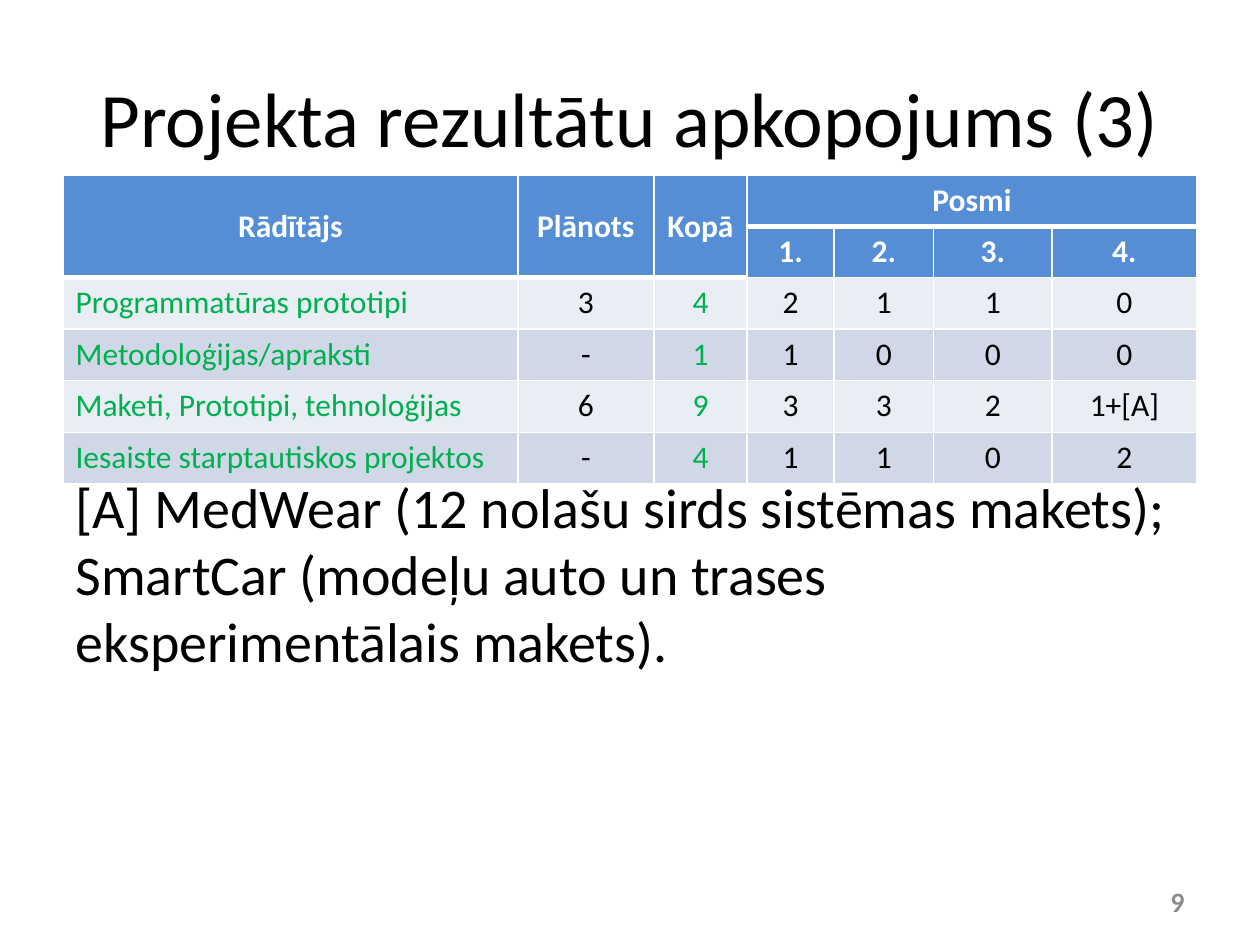
from dataclasses import dataclass

from lxml import etree
from pptx import Presentation
from pptx.dml.color import RGBColor
from pptx.enum import text
from pptx.oxml import ns
from pptx.util import Inches, Pt


@dataclass(frozen=True)
class Theme:
    font: str = "Calibri"
    ink: str = "000000"
    white: str = "FFFFFF"
    header: str = "558ED5"
    accent: str = "00B050"
    muted: str = "8C8C8C"
    bands: tuple = ("E9EDF4", "D0D8E8")
    title_size: int = 44
    note_size: int = 32
    table_size: int = 18
    number_size: int = 16


theme = Theme()


def write(frame, words, size, color, align, bold=False):
    frame.text = words
    paragraph = frame.paragraphs[0]
    paragraph.alignment = align
    font = paragraph.runs[0].font if paragraph.runs else paragraph.font
    font.name, font.size, font.bold = theme.font, Pt(size), bold
    font.color.rgb = RGBColor.from_string(color)


def add_borders(cell, bottom_width):
    properties = cell._tc.get_or_add_tcPr()
    for side, width in (("L", 1), ("R", 1), ("T", 1), ("B", bottom_width)):
        line = etree.SubElement(properties, ns.qn(f"a:ln{side}"), w=str(Pt(width)))
        fill = etree.SubElement(line, ns.qn("a:solidFill"))
        etree.SubElement(fill, ns.qn("a:srgbClr"), val=theme.white)


LEFT, CENTER, RIGHT = text.PP_ALIGN.LEFT, text.PP_ALIGN.CENTER, text.PP_ALIGN.RIGHT

presentation = Presentation()
presentation.slide_width, presentation.slide_height = Inches(10), Inches(7.5)
slide = presentation.slides.add_slide(presentation.slide_layouts[5])

title = slide.shapes.title
title.left, title.top, title.width, title.height = Inches(0.5), Inches(0.3), Inches(9), Inches(1.25)
title.text_frame.vertical_anchor = text.MSO_ANCHOR.MIDDLE
write(title.text_frame, "Projekta rezultātu apkopojums (3)", theme.title_size, theme.ink, CENTER)

results = [
    ["Rādītājs", "Plānots", "Kopā", "Posmi", "", "", ""],
    ["", "", "", "1.", "2.", "3.", "4."],
    ["Programmatūras prototipi", "3", "4", "2", "1", "1", "0"],
    ["Metodoloģijas/apraksti", "-", "1", "1", "0", "0", "0"],
    ["Maketi, Prototipi, tehnoloģijas", "6", "9", "3", "3", "2", "1+[A]"],
    ["Iesaiste starptautiskos projektos", "-", "4", "1", "1", "0", "2"],
]
column_widths = [3.61, 1.08, 0.74, 0.69, 0.79, 0.94, 1.15]
row_heights = [0.39] * 2 + [0.41] * 4
HEADER_ROWS = 2
ACCENT_COLUMNS = (0, 2)

table = slide.shapes.add_table(
    len(row_heights), len(column_widths), Inches(0.5), Inches(1.39), Inches(9), Inches(2.42)
).table
for column, width in zip(table.columns, column_widths):
    column.width = Inches(width)
for row, height in zip(table.rows, row_heights):
    row.height = Inches(height)

for r, values in enumerate(results):
    for c, value in enumerate(values):
        cell = table.cell(r, c)
        is_header = r < HEADER_ROWS
        if is_header:
            background, color = theme.header, theme.white
            cell.vertical_anchor = text.MSO_ANCHOR.MIDDLE
        else:
            background = theme.bands[(r - HEADER_ROWS) % 2]
            color = theme.accent if c in ACCENT_COLUMNS else theme.ink
        align = LEFT if c == 0 and not is_header else CENTER
        write(cell.text_frame, value, theme.table_size, color, align, is_header)
        add_borders(cell, 3 if r == 0 or (is_header and c < 3) else 1)
        cell.fill.solid()
        cell.fill.fore_color.rgb = RGBColor.from_string(background)

for c in range(3):
    table.cell(0, c).merge(table.cell(1, c))
table.cell(0, 3).merge(table.cell(0, 6))

page_number = slide.shapes.add_textbox(Inches(7.17), Inches(6.95), Inches(2.33), Inches(0.4)).text_frame
page_number.word_wrap = True
page_number.vertical_anchor = text.MSO_ANCHOR.MIDDLE
write(page_number, "9", theme.number_size, theme.muted, RIGHT, True)

note = slide.shapes.add_textbox(Inches(0.5), Inches(3.7), Inches(9), Inches(3)).text_frame
note.word_wrap = True
write(
    note,
    "[A] MedWear (12 nolašu sirds sistēmas makets); "
    "SmartCar (modeļu auto un trases eksperimentālais makets).",
    theme.note_size, theme.ink, LEFT,
)

presentation.save("out.pptx")
